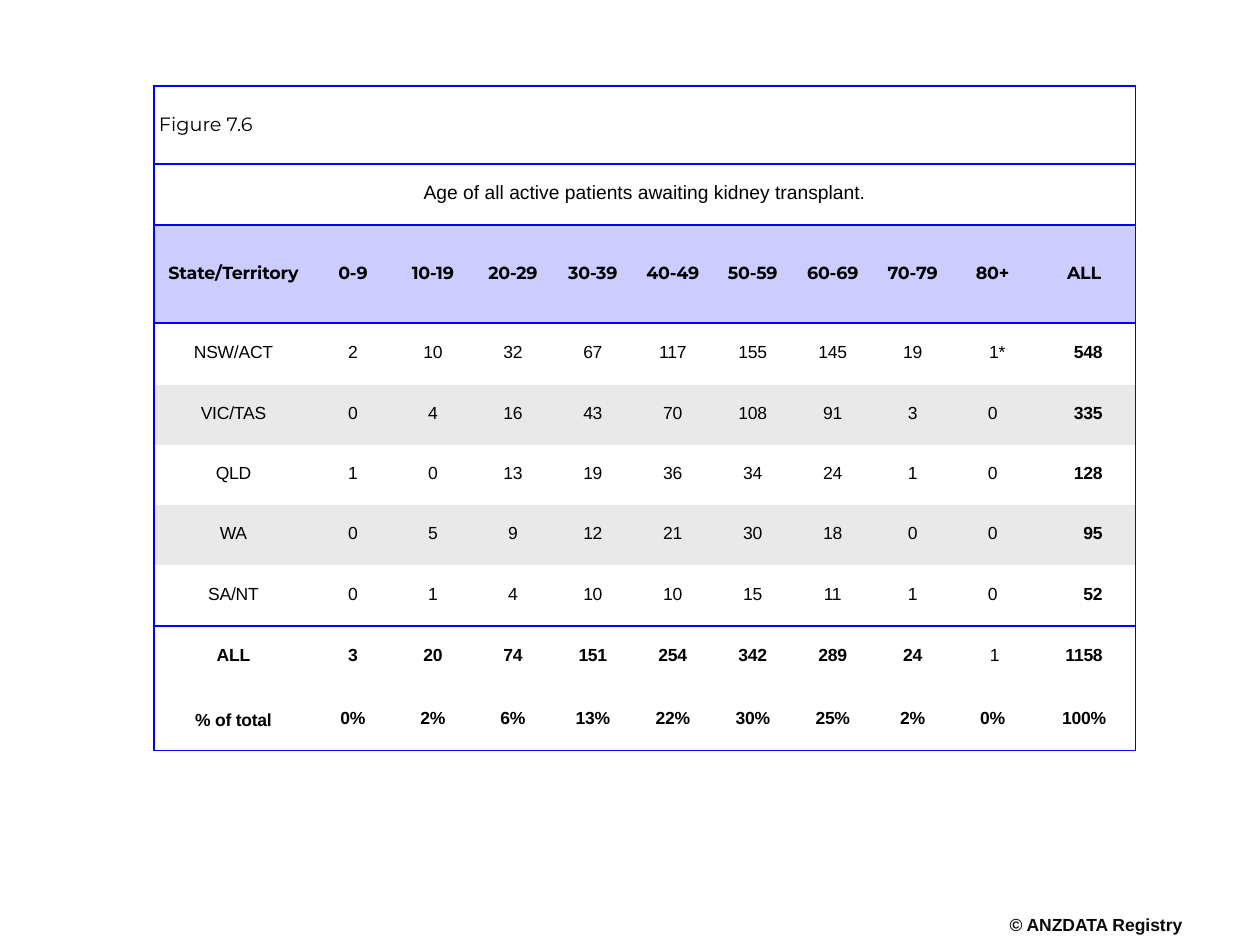
import pptx
import pptx.dml.color
import pptx.enum.text
import pptx.oxml.ns
import pptx.util
from lxml import etree

PX = 914400 // 126
RGB = pptx.dml.color.RGBColor
BLACK = RGB(0x00, 0x00, 0x00)
CREDIT_INK = RGB(0x08, 0x08, 0x08)
WHITE = RGB(0xFF, 0xFF, 0xFF)
LAVENDER = RGB(0xCC, 0xCC, 0xFF)
GREY = RGB(0xE9, 0xE9, 0xE9)
BLUE = RGB(0x00, 0x00, 0xFF)
ALIGN = pptx.enum.text.PP_ALIGN

FIGURE = "Figure 7.6"
TITLE = "Age of all active patients awaiting kidney transplant."
HEADER = ["State/Territory", "0-9", "10-19", "20-29", "30-39", "40-49",
          "50-59", "60-69", "70-79", "80+", "ALL"]
STATES = [
    ["NSW/ACT", "2", "10", "32", "67", "117", "155", "145", "19", "1*", "548"],
    ["VIC/TAS", "0", "4", "16", "43", "70", "108", "91", "3", "0", "335"],
    ["QLD", "1", "0", "13", "19", "36", "34", "24", "1", "0", "128"],
    ["WA", "0", "5", "9", "12", "21", "30", "18", "0", "0", "95"],
    ["SA/NT", "0", "1", "4", "10", "10", "15", "11", "1", "0", "52"],
]
TOTALS = [
    ["ALL", "3", "20", "74", "151", "254", "342", "289", "24", "1", "1158"],
    ["% of total", "0%", "2%", "6%", "13%", "22%", "30%", "25%", "2%", "0%",
     "100%"],
]
COLUMN_WIDTHS = [159] + [80] * 10
ROW_HEIGHTS = [78, 61, 98, 62, 60, 60, 60, 61, 62, 63]
FIRST_STATE = 3
FIRST_TOTAL = FIRST_STATE + len(STATES)
LAST_ROW = len(ROW_HEIGHTS) - 1
LAST_COLUMN = len(COLUMN_WIDTHS) - 1
RULED_EDGES = {0, 1, 2, FIRST_STATE, FIRST_TOTAL, LAST_ROW + 1}
INSET = 5
TITLE_SIDE_INSET = 49
TOTAL_RIGHT_INSET = 33


def px(length):
    return pptx.util.Emu(length * PX)


def add_run(paragraph, text, size, font="Arial", bold=False, colour=BLACK):
    run = paragraph.add_run()
    run.text = text
    run.font.name = font
    run.font.size = pptx.util.Pt(size)
    run.font.bold = bold
    run.font.color.rgb = colour
    return run


def set_borders(cell, row, column, spanned=False):
    """Rule the outer frame and the section edges; leave other sides bare."""
    ruled = {
        "L": column == 0,
        "R": spanned or column == LAST_COLUMN,
        "T": row in RULED_EDGES,
        "B": row + 1 in RULED_EDGES,
    }
    properties = cell._tc.get_or_add_tcPr()
    qn = pptx.oxml.ns.qn
    for side, visible in ruled.items():
        line = etree.SubElement(properties, qn(f"a:ln{side}"))
        line.set("w", str(pptx.util.Pt(1)))
        if visible:
            fill = etree.SubElement(line, qn("a:solidFill"))
            etree.SubElement(fill, qn("a:srgbClr")).set("val", str(BLUE))
        else:
            etree.SubElement(line, qn("a:noFill"))


def set_fill(cell, colour):
    if colour is None:
        cell.fill.background()
    else:
        cell.fill.solid()
        cell.fill.fore_color.rgb = colour


def set_insets(cell, left=INSET, right=INSET, vertical=INSET):
    cell.margin_left, cell.margin_right = px(left), px(right)
    cell.margin_top = cell.margin_bottom = px(vertical)


def write_cell(cell, text, size, align=ALIGN.CENTER, spacing=0.85, **style):
    cell.vertical_anchor = pptx.enum.text.MSO_ANCHOR.MIDDLE
    paragraph = cell.text_frame.paragraphs[0]
    paragraph.alignment = align
    paragraph.line_spacing = spacing
    return add_run(paragraph, text, size, **style)


def write_data_cell(cell, text, **style):
    run = write_cell(cell, text, 10, **style)
    run._r.get_or_add_rPr().set("spc", "-10")


def fill_banner_row(table, row, text, size, align, font):
    """Write one text across the whole width of the table."""
    banner = table.cell(row, 0)
    banner.merge(table.cell(row, LAST_COLUMN))
    for column in range(LAST_COLUMN + 1):
        cell = table.cell(row, column)
        set_borders(cell, row, column, spanned=column == 0)
        set_fill(cell, WHITE)
    set_insets(banner)
    write_cell(banner, text, size, align, font=font)


def fill_header_row(table, row):
    for column, label in enumerate(HEADER):
        cell = table.cell(row, column)
        set_borders(cell, row, column)
        set_fill(cell, LAVENDER)
        set_insets(cell)
        write_data_cell(cell, label, font="Montserrat", bold=True)


def fill_state_rows(table):
    for index, values in enumerate(STATES):
        row = FIRST_STATE + index
        for column, value in enumerate(values):
            cell = table.cell(row, column)
            is_total = column == LAST_COLUMN
            set_borders(cell, row, column)
            set_fill(cell, GREY if index % 2 else None)
            left = INSET + 9 if value.endswith("*") else INSET
            set_insets(cell, left, TOTAL_RIGHT_INSET if is_total else INSET)
            write_data_cell(cell, value, bold=is_total,
                            align=ALIGN.RIGHT if is_total else ALIGN.CENTER)


def fill_total_rows(table):
    for row, values in enumerate(TOTALS, FIRST_TOTAL):
        for column, value in enumerate(values):
            cell = table.cell(row, column)
            is_light = value == "1"
            set_borders(cell, row, column)
            set_fill(cell, None)
            set_insets(cell, INSET + 4 if is_light else INSET)
            spacing = 1.14 if value == "% of total" else 0.85
            write_data_cell(cell, value, bold=not is_light, spacing=spacing)


def add_patient_table(slide):
    table = slide.shapes.add_table(
        len(ROW_HEIGHTS), len(COLUMN_WIDTHS), px(154), px(86),
        px(sum(COLUMN_WIDTHS)), px(sum(ROW_HEIGHTS))).table
    table.first_row = table.horz_banding = False
    for column, width in zip(table.columns, COLUMN_WIDTHS):
        column.width = px(width)
    for row, height in zip(table.rows, ROW_HEIGHTS):
        row.height = px(height)
    fill_banner_row(table, 0, FIGURE, 11, ALIGN.LEFT, "Montserrat")
    fill_banner_row(table, 1, TITLE, 11, ALIGN.CENTER, "Arial")
    set_insets(table.cell(1, 0), TITLE_SIDE_INSET, TITLE_SIDE_INSET, 2)
    fill_header_row(table, 2)
    fill_state_rows(table)
    fill_total_rows(table)


def add_credit(slide):
    frame = slide.shapes.add_textbox(px(1007), px(917), px(178), px(21)).text_frame
    frame.margin_left = frame.margin_right = 0
    frame.margin_top = frame.margin_bottom = 0
    frame.word_wrap = False
    frame.auto_size = pptx.enum.text.MSO_AUTO_SIZE.SHAPE_TO_FIT_TEXT
    paragraph = frame.paragraphs[0]
    paragraph.alignment = ALIGN.CENTER
    paragraph.line_spacing = 0.85
    add_run(paragraph, "© ANZDATA Registry", 10, bold=True, colour=CREDIT_INK)


def main():
    deck = pptx.Presentation()
    deck.slide_width, deck.slide_height = px(1260), px(945)
    slide = deck.slides.add_slide(deck.slide_layouts[6])
    add_credit(slide)
    add_patient_table(slide)
    deck.save("out.pptx")


if __name__ == "__main__":
    main()
